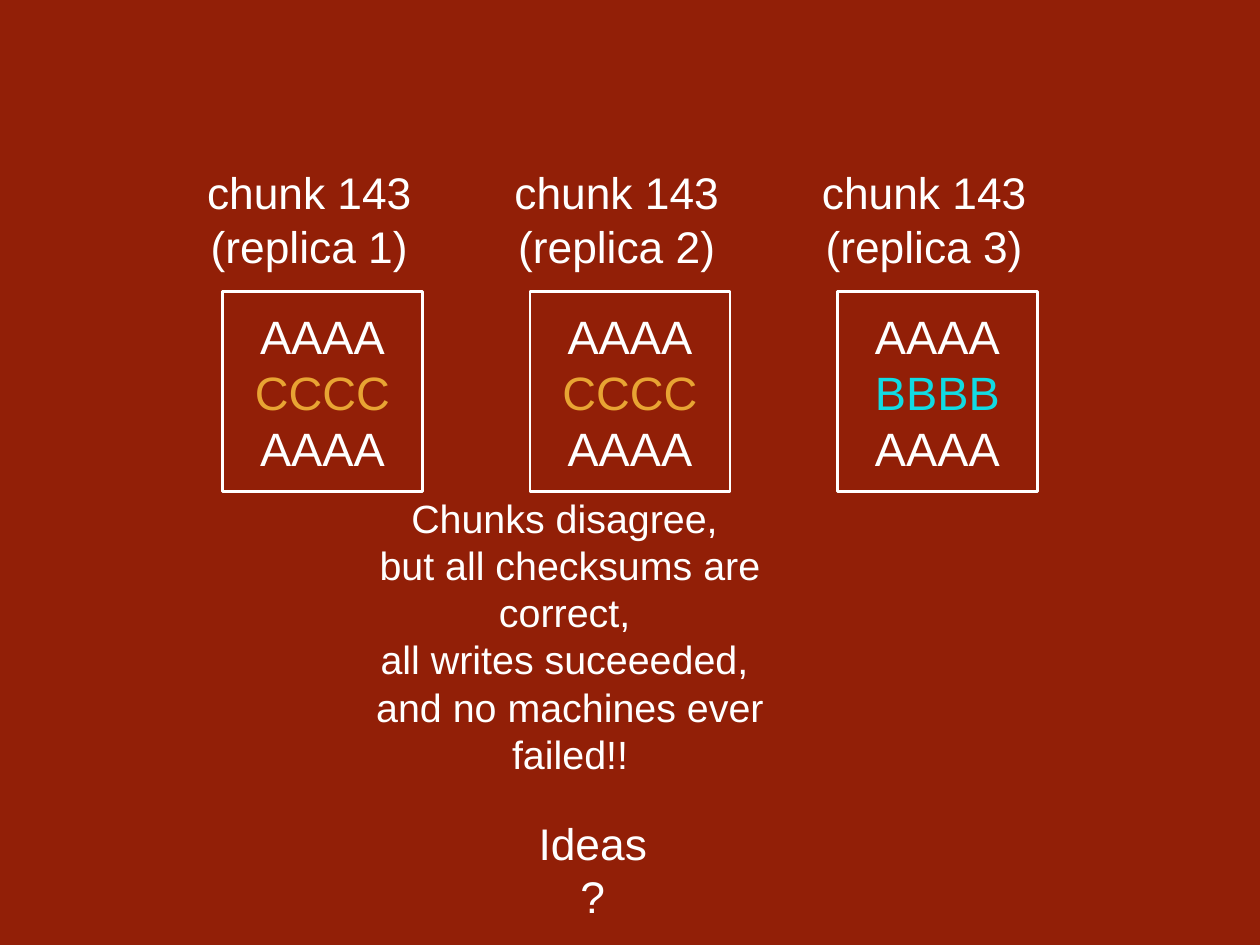
"""Build a slide comparing three replicas of one chunk whose contents disagree."""
from dataclasses import dataclass

from pptx import Presentation
from pptx.dml.color import RGBColor
from pptx.enum.shapes import MSO_SHAPE as Preset
from pptx.enum.text import MSO_ANCHOR as Anchor, PP_ALIGN as Align
from pptx.shapes.autoshape import Shape
from pptx.slide import Slide
from pptx.util import Inches, Pt

BACKGROUND = "921F07"
WHITE = "FFFFFF"
ORANGE = "E8A433"
CYAN = "11DBE3"
FIRST_LEFT, PITCH = 2.51, 3.47
BLOCK_TOP, BLOCK_SIDE = 3.29, 2.26
LABEL_SHIFT, LABEL_WIDTH = -0.27, 2.5


@dataclass(frozen=True)
class Replica:
    number: int
    middle: str
    middle_color: str


REPLICAS = (
    Replica(1, "CCCC", ORANGE),
    Replica(2, "CCCC", ORANGE),
    Replica(3, "BBBB", CYAN),
)


def rgb(value: str) -> RGBColor:
    return RGBColor.from_string(value)


def write(shape: Shape, *lines: str, size: float, colors: tuple[str, ...] = (WHITE,),
          anchor: Anchor = Anchor.TOP,
          insets: tuple[float, float, float, float] = (0, 0, 0, 0)) -> None:
    frame = shape.text_frame
    frame.word_wrap = True
    frame.vertical_anchor = anchor
    (frame.margin_left, frame.margin_top,
     frame.margin_right, frame.margin_bottom) = map(Inches, insets)
    for index, line in enumerate(lines):
        paragraph = frame.add_paragraph() if index else frame.paragraphs[0]
        paragraph.alignment = Align.CENTER
        paragraph.text = line
        for run in paragraph.runs:
            run.font.name = "Arial"
            run.font.size = Pt(size)
            run.font.color.rgb = rgb(colors[index % len(colors)])


def add_text(slide: Slide, left: float, top: float, width: float, height: float,
             *lines: str, **text_format) -> None:
    box = slide.shapes.add_textbox(*map(Inches, (left, top, width, height)))
    write(box, *lines, **text_format)


def add_replica(slide: Slide, replica: Replica) -> None:
    left = FIRST_LEFT + (replica.number - 1) * PITCH
    block = slide.shapes.add_shape(
        Preset.RECTANGLE, *map(Inches, (left, BLOCK_TOP, BLOCK_SIDE, BLOCK_SIDE)))
    block.shadow.inherit = False
    block.fill.background()
    block.line.color.rgb = rgb(WHITE)
    block.line.width = Pt(2)
    write(block, "AAAA", replica.middle, "AAAA", size=38, anchor=Anchor.MIDDLE,
          colors=(WHITE, replica.middle_color, WHITE))
    add_text(slide, left + LABEL_SHIFT, 1.87, LABEL_WIDTH, 1.31,
             "chunk 143", f"(replica {replica.number})", size=36)


def main() -> None:
    deck = Presentation()
    deck.slide_width, deck.slide_height = Inches(14.22), Inches(10.67)
    slide = deck.slides.add_slide(deck.slide_layouts[6])
    slide.background.fill.solid()
    slide.background.fill.fore_color.rgb = rgb(BACKGROUND)
    for replica in REPLICAS:
        add_replica(slide, replica)
    add_text(slide, 4.19, 6.04, 5.83, 2.27,
             "Chunks disagree, \nbut all checksums are correct, \n"
             "all writes suceeeded, \nand no machines ever failed!!",
             size=32, anchor=Anchor.MIDDLE, insets=(0, 0.06, 1.34, 0.06))
    add_text(slide, 5.98, 9.17, 1.53, 0.71, "Ideas?",
             size=36, insets=(0.09, 0.05, 0.2, 0.05))
    deck.save("out.pptx")


if __name__ == "__main__":
    main()
